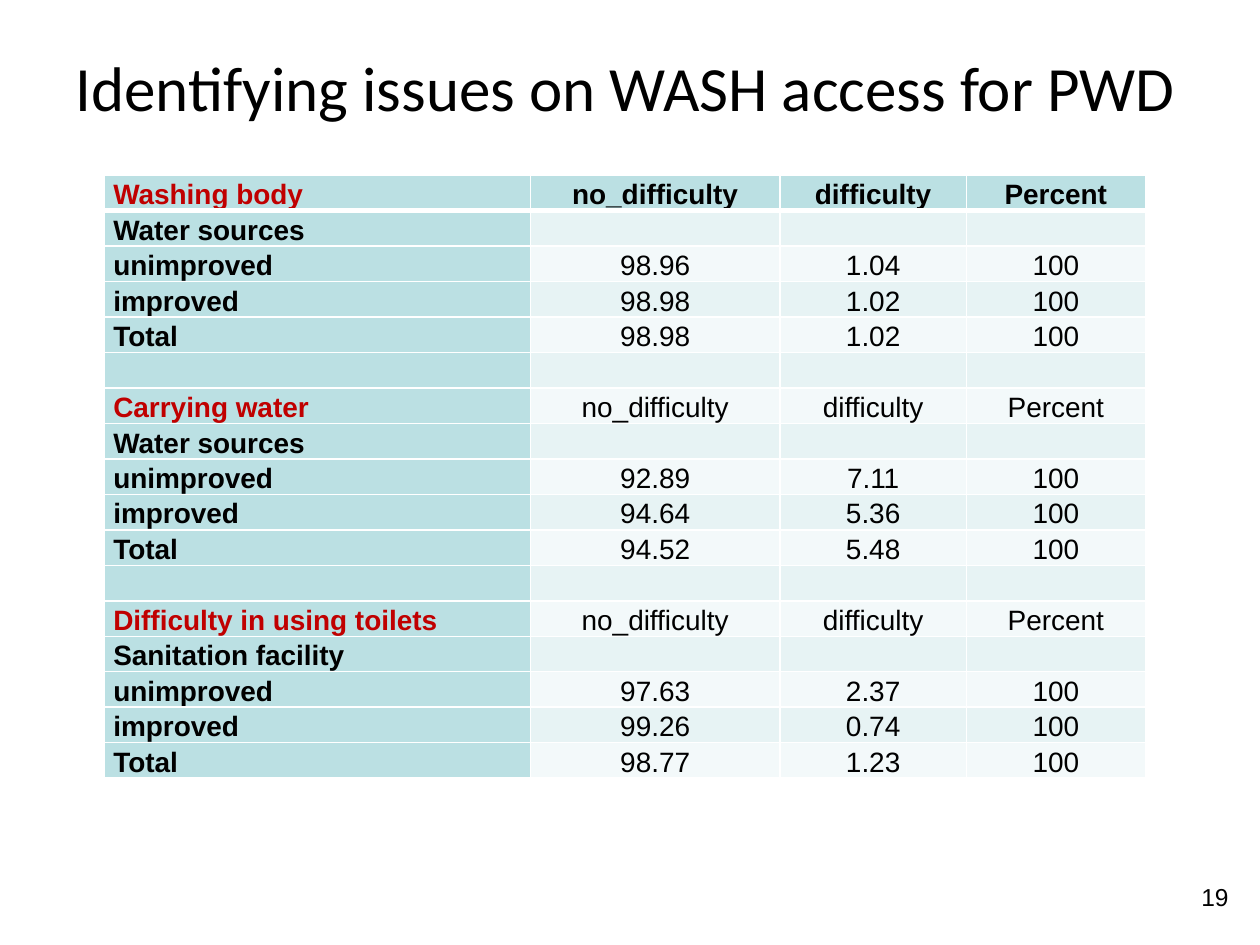
from pptx import Presentation
from pptx.dml.color import RGBColor
from pptx.enum.text import MSO_ANCHOR as Anchor, PP_ALIGN as Align
from pptx.oxml.xmlchemy import OxmlElement
from pptx.util import Inches, Pt

COLUMN_WIDTHS = [3.38, 1.98, 1.48, 1.42]
TABLE_HEIGHT = 4.79
HEADINGS = ["no_difficulty", "difficulty", "Percent"]
LEVELS = ["unimproved", "improved", "Total"]
SECTIONS = [
    ("Washing body", "Water sources",
     [("98.96", "1.04"), ("98.98", "1.02"), ("98.98", "1.02")]),
    ("Carrying water", "Water sources",
     [("92.89", "7.11"), ("94.64", "5.36"), ("94.52", "5.48")]),
    ("Difficulty in using toilets", "Sanitation facility",
     [("97.63", "2.37"), ("99.26", "0.74"), ("98.77", "1.23")]),
]


def color(value):
    """Return the colour for a hex string."""
    return RGBColor.from_string(value)


def style_font(paragraph, name, size, value="000000", bold=False):
    """Set the typeface, size, colour and weight of a paragraph."""
    font = paragraph.font
    font.name, font.size, font.bold = name, Pt(size), bold
    font.color.rgb = color(value)


def add_label(slide, text, box, name, size, align=Align.LEFT, anchor=Anchor.TOP):
    """Add a one-paragraph text box; box is left, top, width, height in inches."""
    frame = slide.shapes.add_textbox(*map(Inches, box)).text_frame
    frame.word_wrap = True
    frame.vertical_anchor = anchor
    paragraph = frame.paragraphs[0]
    paragraph.text = text
    paragraph.alignment = align
    style_font(paragraph, name, size)


def table_rows():
    """List the table's rows, with an empty row between sections."""
    rows = []
    for title, facility, values in SECTIONS:
        if rows:
            rows.append([""] * 4)
        rows.append([title, *HEADINGS])
        rows.append([facility, "", "", ""])
        rows += [[level, *pair, "100"] for level, pair in zip(LEVELS, values)]
    return rows


def set_borders(cell, bottom_width):
    """Draw white borders around a cell."""
    properties = cell._tc.get_or_add_tcPr()
    sides = [("a:lnL", 1), ("a:lnR", 1), ("a:lnT", 1), ("a:lnB", bottom_width)]
    for index, (tag, width) in enumerate(sides):
        line = OxmlElement(tag)
        line.set("w", str(Pt(width)))
        fill = OxmlElement("a:solidFill")
        white = OxmlElement("a:srgbClr")
        white.set("val", "FFFFFF")
        fill.append(white)
        line.append(fill)
        properties.insert(index, line)


def fill_cell(cell, text, row, column):
    """Write and format one table cell."""
    is_label = column == 0
    is_title = is_label and text in [section[0] for section in SECTIONS]
    shade = "E7F3F4" if row % 2 else "F3F9FA"
    cell.fill.solid()
    cell.fill.fore_color.rgb = color("BBE0E3" if is_label or row == 0 else shade)
    cell.margin_left = cell.margin_right = Inches(0.07)
    cell.margin_top = cell.margin_bottom = 0
    cell.vertical_anchor = Anchor.BOTTOM
    set_borders(cell, 3 if row == 0 else 1)
    paragraph = cell.text_frame.paragraphs[0]
    if text:
        paragraph.text = text
    else:
        paragraph._p.get_or_add_endParaRPr().set("sz", "1600")
    paragraph.alignment = Align.LEFT if is_label else Align.CENTER
    style_font(paragraph, "Arial", 16, "C00000" if is_title else "000000",
               is_label or row == 0)


def add_access_table(slide, left, top):
    """Add the table of difficulty by water source and sanitation facility."""
    rows = table_rows()
    size = sum(COLUMN_WIDTHS), TABLE_HEIGHT
    table = slide.shapes.add_table(
        len(rows), len(COLUMN_WIDTHS), *map(Inches, (left, top, *size))).table
    table.first_row = table.horz_banding = False
    for column, width in zip(table.columns, COLUMN_WIDTHS):
        column.width = Inches(width)
    for row, texts in enumerate(rows):
        table.rows[row].height = Inches(TABLE_HEIGHT / len(rows))
        for column, text in enumerate(texts):
            fill_cell(table.cell(row, column), text, row, column)


def main():
    """Build the slide and save it."""
    presentation = Presentation()
    presentation.slide_width, presentation.slide_height = Inches(10), Inches(7.5)
    slide = presentation.slides.add_slide(presentation.slide_layouts[6])
    add_label(slide, "Identifying issues on WASH access for PWD",
              (0.5, 0.3, 9.38, 0.77), "Calibri", 36, anchor=Anchor.MIDDLE)
    add_label(slide, "19", (7.52, 6.95, 2.33, 0.4), "Arial", 14, Align.RIGHT)
    add_access_table(slide, 0.83, 1.39)
    presentation.save("out.pptx")


if __name__ == "__main__":
    main()
